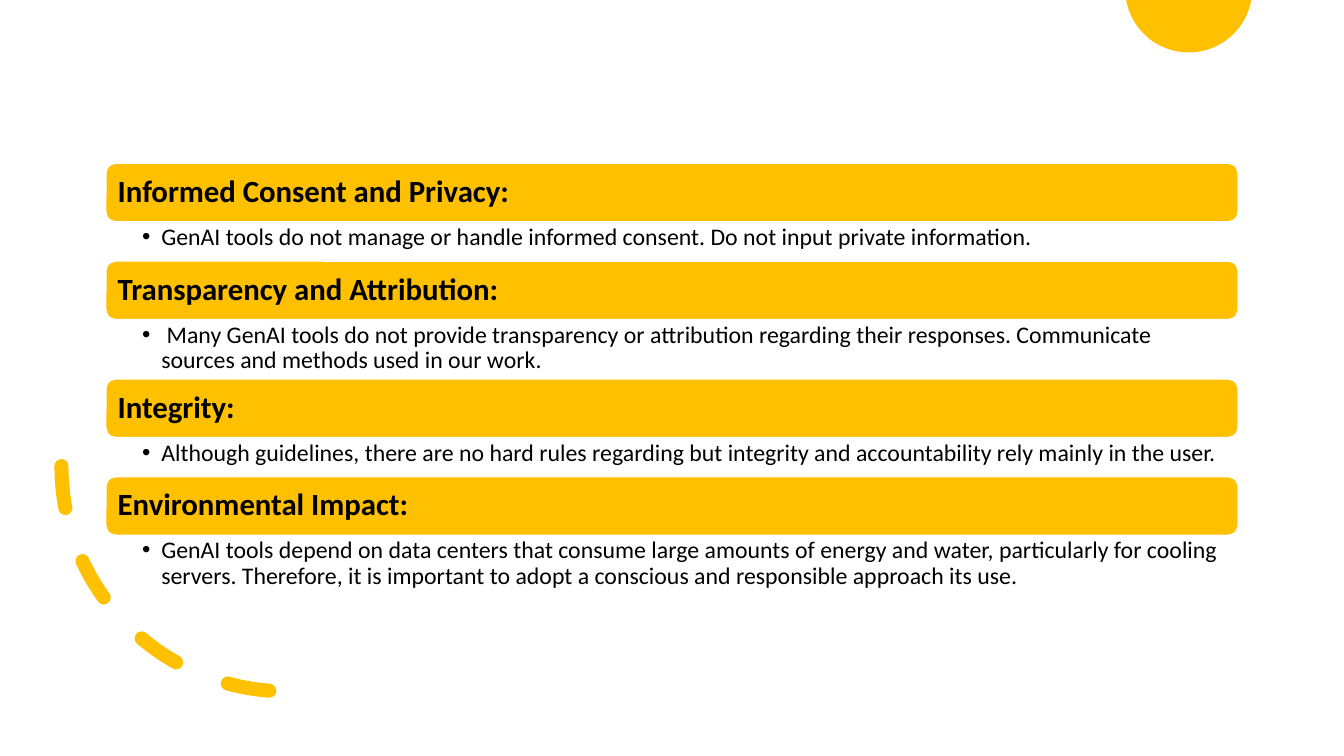
"""Build a slide of four ethical considerations for GenAI tools."""
from dataclasses import dataclass
from math import asin, cos, pi, sin

from lxml.etree import SubElement
from pptx import Presentation
from pptx.dml.color import RGBColor
from pptx.enum.dml import MSO_LINE_DASH_STYLE as Dash
from pptx.enum.shapes import MSO_SHAPE as Preset
from pptx.enum.text import MSO_ANCHOR as Anchor, PP_ALIGN as Align
from pptx.oxml.ns import qn
from pptx.util import Inches, Pt

SECTIONS = [
    ("Informed Consent and Privacy:", 1,
     "GenAI tools do not manage or handle informed consent. Do not input private information."),
    ("Transparency and Attribution:", 2,
     " Many GenAI tools do not provide transparency or attribution regarding their responses. "
     "Communicate sources and methods used in our work."),
    ("Integrity:", 1,
     "Although guidelines, there are no hard rules regarding but integrity and accountability "
     "rely mainly in the user."),
    ("Environmental Impact:", 2,
     "GenAI tools depend on data centers that consume large amounts of energy and water, "
     "particularly for cooling servers. Therefore, it is important to adopt a conscious and "
     "responsible approach its use."),
]


@dataclass(frozen=True)
class Theme:
    accent: RGBColor = RGBColor(0xFF, 0xC0, 0x00)
    edge: RGBColor = RGBColor(0xFF, 0xFF, 0xFF)
    text: RGBColor = RGBColor(0x00, 0x00, 0x00)
    font: str = "Calibri"
    heading_size: int = 22
    note_size: int = 17
    arc_width: int = 10


THEME = Theme()
SLIDE_WIDTH, SLIDE_HEIGHT = 13.33, 7.5
LIST_LEFT, LIST_TOP, LIST_WIDTH = 1.05, 1.62, 11.23
BAR_HEIGHT = 0.58
NOTE_HEIGHTS = {1: 0.39, 2: 0.59}
BULLET_INDENT = 0.19
SUN_X, SUN_Y, SUN_RADIUS = 11.79, -0.11, 0.63
ARC_LEFT, ARC_TOP, ARC_SIZE = 0.61, 2.39, 4.47


def set_insets(frame, left, top, right, bottom):
    frame.margin_left, frame.margin_top = Inches(left), Inches(top)
    frame.margin_right, frame.margin_bottom = Inches(right), Inches(bottom)


def write(paragraph, text, size, bold=False):
    paragraph.alignment = Align.LEFT
    paragraph.line_spacing = 0.9
    run = paragraph.add_run()
    run.text = text
    run.font.name = THEME.font
    run.font.size = Pt(size)
    run.font.bold = bold
    run.font.color.rgb = THEME.text


def add_bullet(paragraph):
    properties = paragraph._p.get_or_add_pPr()
    properties.set("marL", str(Inches(BULLET_INDENT)))
    properties.set("indent", str(-Inches(BULLET_INDENT)))
    SubElement(properties, qn("a:buFont")).set("typeface", "Arial")
    SubElement(properties, qn("a:buChar")).set("char", "•")


def add_sun(slide, steps=60):
    start = asin(-SUN_Y / SUN_RADIUS)
    sweep = pi - 2 * start
    angles = [start + sweep * step / steps for step in range(steps + 1)]
    points = [(Inches(SUN_X + SUN_RADIUS * cos(angle)),
               Inches(max(0, SUN_Y + SUN_RADIUS * sin(angle)))) for angle in angles]
    builder = slide.shapes.build_freeform(*points[0])
    builder.add_line_segments(points[1:], close=True)
    sun = builder.convert_to_shape()
    sun.shadow.inherit = False
    sun.fill.solid()
    sun.fill.fore_color.rgb = THEME.accent
    sun.line.fill.background()


def add_dashed_arc(slide):
    arc = slide.shapes.add_shape(
        Preset.ARC, Inches(ARC_LEFT), Inches(ARC_TOP), Inches(ARC_SIZE), Inches(ARC_SIZE))
    arc.shadow.inherit = False
    arc.rotation = 90
    arc._element.spPr.find(qn("a:xfrm")).set("flipV", "1")
    arc.fill.background()
    arc.line.color.rgb = THEME.accent
    arc.line.width = Pt(THEME.arc_width)
    arc.line.dash_style = Dash.DASH
    arc.line._get_or_add_ln().set("cap", "rnd")


def add_heading(slide, top, text):
    bar = slide.shapes.add_shape(
        Preset.ROUNDED_RECTANGLE, Inches(LIST_LEFT), Inches(top),
        Inches(LIST_WIDTH), Inches(BAR_HEIGHT))
    bar.shadow.inherit = False
    bar.fill.solid()
    bar.fill.fore_color.rgb = THEME.accent
    bar.line.color.rgb = THEME.edge
    bar.line.width = Pt(1)
    frame = bar.text_frame
    frame.vertical_anchor = Anchor.MIDDLE
    set_insets(frame, 0.09, 0.09, 0.09, 0.09)
    write(frame.paragraphs[0], text, THEME.heading_size, bold=True)


def add_note(slide, top, height, text):
    box = slide.shapes.add_textbox(
        Inches(LIST_LEFT), Inches(top), Inches(LIST_WIDTH), Inches(height))
    frame = box.text_frame
    frame.word_wrap = True
    set_insets(frame, 0.36, 0.03, 0.17, 0.03)
    paragraph = frame.paragraphs[0]
    add_bullet(paragraph)
    write(paragraph, text, THEME.note_size)


def main():
    presentation = Presentation()
    presentation.slide_width = Inches(SLIDE_WIDTH)
    presentation.slide_height = Inches(SLIDE_HEIGHT)
    slide = presentation.slides.add_slide(presentation.slide_layouts[6])
    add_sun(slide)
    add_dashed_arc(slide)
    top = LIST_TOP
    for heading, lines, note in SECTIONS:
        add_heading(slide, top, heading)
        add_note(slide, top + BAR_HEIGHT, NOTE_HEIGHTS[lines], note)
        top += BAR_HEIGHT + NOTE_HEIGHTS[lines]
    presentation.save("out.pptx")


if __name__ == "__main__":
    main()
